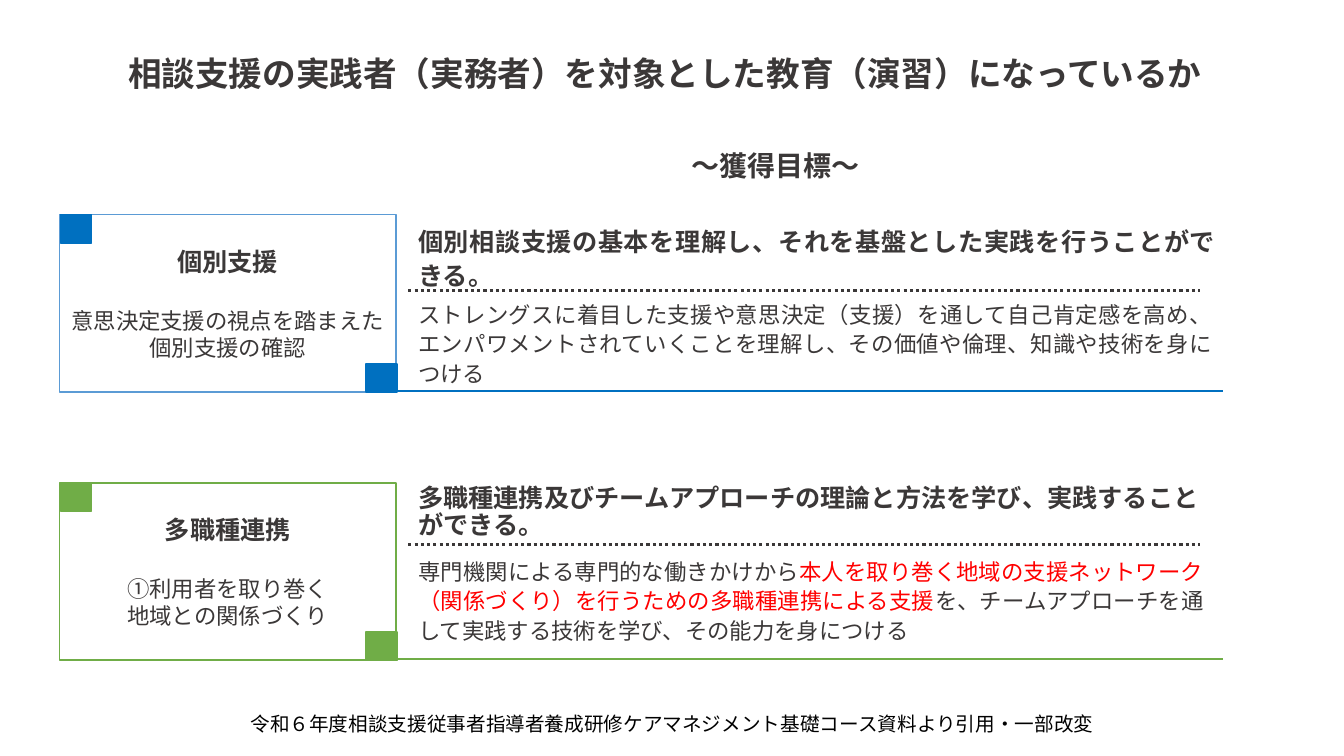
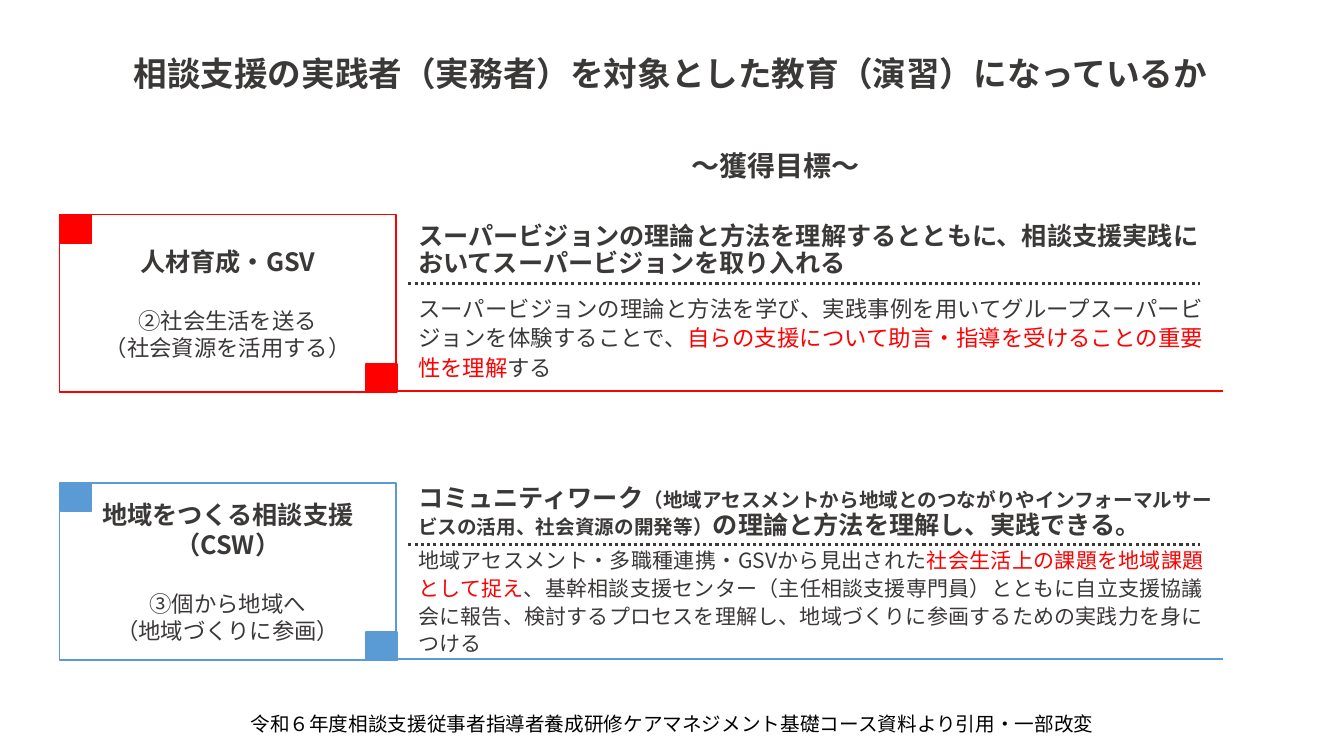
from dataclasses import dataclass
from typing import Optional

from lxml.etree import SubElement
from pptx import Presentation
from pptx.dml.color import RGBColor
from pptx.enum.dml import MSO_LINE
from pptx.enum.shapes import MSO_CONNECTOR, MSO_SHAPE
from pptx.enum.text import MSO_ANCHOR, PP_ALIGN
from pptx.oxml.ns import qn
from pptx.util import Pt

FONT = "Noto Sans CJK JP"
COLORS = {
    "text": "3B3838",
    "black": "000000",
    "red": "FF0000",
    "blue": "0070C0",
    "light blue": "5B9BD5",
    "green": "70AD47",
}
LINE_HEIGHT = 1.2
TITLE = "相談支援の実践者（実務者）を対象とした教育（演習）になっているか"
SUBTITLE = "～獲得目標～"
SOURCE_NOTE = "令和６年度相談支援従事者指導者養成研修ケアマネジメント基礎コース資料より引用・一部改変"

PANEL_LEFT, PANEL_WIDTH, PANEL_HEIGHT = 42.5, 240.5, 126.7
PANEL_TOPS = (153.4, 344.9)
HEADING_TOPS = (156.2, 343.4)
CORNER_WIDTH, CORNER_HEIGHT = 22.3, 20.2
GOAL_LEFT, HEADING_WIDTH = 291.6, 584
DOTTED_RIGHT, BASELINE_RIGHT = 857.5, 873.4


@dataclass(frozen=True)
class Run:
    text: str
    size: float = 16
    color: str = "text"
    bold: bool = False


@dataclass(frozen=True)
class Line:
    """One paragraph with its alignment and spacing."""
    runs: tuple[Run, ...]
    align: PP_ALIGN = PP_ALIGN.CENTER
    spacing: float = 1.0
    before: float = 0


@dataclass(frozen=True)
class Box:
    left: float
    top: float
    width: float
    height: float


@dataclass(frozen=True)
class Goal:
    accent: str
    names: tuple[str, ...]
    topics: tuple[str, ...]
    heading: Line
    body: Line
    dotted_top: float
    body_top: float
    body_width: float = 575.3
    outline: Optional[str] = None


@dataclass(frozen=True)
class GoalSlide:
    title_width: float
    goals: tuple[Goal, Goal]


def heading(*runs: Run, align: PP_ALIGN = PP_ALIGN.LEFT, spacing: float = 0.9) -> Line:
    return Line(runs, align, spacing)


def body(*runs: Run) -> Line:
    return Line(runs, PP_ALIGN.JUSTIFY, 1.1)


def strong(text: str, size: float = 18) -> Run:
    return Run(text, size, bold=True)


SLIDES = (
    GoalSlide(906.5, (
        Goal(
            "blue", ("個別支援",), ("意思決定支援の視点を踏まえた個別支援の確認",),
            heading(strong("個別相談支援の基本を理解し、それを基盤とした実践を行うことができる。"),
                    align=PP_ALIGN.JUSTIFY, spacing=1.1),
            body(Run("ストレングスに着目した支援や意思決定（支援）を通して自己肯定感を高め、"
                     "エンパワメントされていくことを理解し、その価値や倫理、知識や技術を身につける")),
            dotted_top=207.4, body_top=209.5, body_width=581.8, outline="light blue",
        ),
        Goal(
            "green", ("多職種連携",), ("①利用者を取り巻く", "地域との関係づくり"),
            heading(strong("多職種連携及びチームアプローチの理論と方法を学び、実践することができる。")),
            body(Run("専門機関による専門的な働きかけから"),
                 Run("本人を取り巻く地域の支援ネットワーク（関係づくり）を行うための多職種連携による支援",
                     color="red"),
                 Run("を、チームアプローチを通して実践する技術を学び、その能力を身につける")),
            dotted_top=388.8, body_top=393.1,
        ),
    )),
    GoalSlide(914.4, (
        Goal(
            "red", ("人材育成・GSV",), ("②社会生活を送る", "（社会資源を活用する）"),
            heading(strong("スーパービジョンの理論と方法を理解するとともに、"
                           "相談支援実践においてスーパービジョンを取り入れる")),
            body(Run("スーパービジョンの理論と方法を学び、"
                     "実践事例を用いてグループスーパービジョンを体験することで、"),
                 Run("自らの支援について助言・指導を受けることの重要性を理解", color="red"),
                 Run("する")),
            dotted_top=202.3, body_top=205.2,
        ),
        Goal(
            "light blue", ("地域をつくる相談支援", "（CSW）"),
            ("③個から地域へ", "（地域づくりに参画）"),
            heading(strong("コミュニティワーク"),
                    strong("（地域アセスメントから地域とのつながりや"
                           "インフォーマルサービスの活用、社会資源の開発等）", 14),
                    strong("の理論と方法を理解し、実践できる。")),
            body(Run("地域アセスメント・多職種連携・GSVから見出された", 15),
                 Run("社会生活上の課題を地域課題として捉え", 15, "red"),
                 Run("、基幹相談支援センター（主任相談支援専門員）とともに自立支援協議会に報告、"
                     "検討するプロセスを理解し、地域づくりに参画するための実践力を身につける", 15)),
            dotted_top=388.8, body_top=385.9,
        ),
    )),
)


def rgb(name: str) -> RGBColor:
    return RGBColor.from_string(COLORS[name])


def apply(target, formats: dict) -> None:
    for name, value in formats.items():
        setattr(target, name, value)


def write(text_frame, lines: list[Line], anchor: MSO_ANCHOR) -> None:
    apply(text_frame, {"word_wrap": True, "vertical_anchor": anchor})
    for index, line in enumerate(lines):
        paragraph = text_frame.add_paragraph() if index else text_frame.paragraphs[0]
        size = max(run.size for run in line.runs)
        apply(paragraph, {
            "alignment": line.align,
            "line_spacing": Pt(round(size * LINE_HEIGHT * line.spacing, 1)),
            "space_before": Pt(line.before),
        })
        for run in line.runs:
            text_run = paragraph.add_run()
            text_run.text = run.text
            apply(text_run.font, {"name": FONT, "size": Pt(run.size), "bold": run.bold})
            text_run.font.color.rgb = rgb(run.color)
            # East Asian glyphs take their typeface from a:ea
            east_asian = SubElement(text_run.font._element, qn("a:ea"))
            east_asian.set("typeface", FONT)


def add_text(slide, box: Box, line: Line, anchor: MSO_ANCHOR = MSO_ANCHOR.TOP) -> None:
    text_box = slide.shapes.add_textbox(
        Pt(box.left), Pt(box.top), Pt(box.width), Pt(box.height))
    write(text_box.text_frame, [line], anchor)


def add_block(slide, box: Box, kind: MSO_SHAPE = MSO_SHAPE.RECTANGLE,
              fill: Optional[str] = None, outline: Optional[str] = None):
    shape = slide.shapes.add_shape(
        kind, Pt(box.left), Pt(box.top), Pt(box.width), Pt(box.height))
    shape.shadow.inherit = False
    if fill:
        shape.fill.solid()
        shape.fill.fore_color.rgb = rgb(fill)
    else:
        shape.fill.background()
    if outline:
        shape.line.color.rgb = rgb(outline)
        shape.line.width = Pt(1)
    else:
        shape.line.fill.background()
    return shape


def add_rule(slide, left: float, right: float, top: float, color: str, width: float,
             dash: Optional[MSO_LINE] = None) -> None:
    connector = slide.shapes.add_connector(
        MSO_CONNECTOR.STRAIGHT, Pt(left), Pt(top), Pt(right), Pt(top))
    connector.line.color.rgb = rgb(color)
    apply(connector.line, {"width": Pt(width), "dash_style": dash})
    SubElement(connector._element.spPr, qn("a:effectLst"))


def add_banner(slide, box: Box, text: str, size: float) -> None:
    shape = add_block(slide, box, MSO_SHAPE.ROUNDED_RECTANGLE)
    write(shape.text_frame, [Line((strong(text, size),))], MSO_ANCHOR.MIDDLE)


def add_panel(slide, goal: Goal, top: float) -> None:
    """Draw the outlined theme box, its two corner marks and the line beside it."""
    panel = add_block(slide, Box(PANEL_LEFT, top, PANEL_WIDTH, PANEL_HEIGHT),
                      outline=goal.outline or goal.accent)
    lines = [Line((strong(name),)) for name in goal.names]
    lines += [Line((Run(topic),), before=0 if index else 18 * LINE_HEIGHT)
              for index, topic in enumerate(goal.topics)]
    write(panel.text_frame, lines, MSO_ANCHOR.MIDDLE)
    right, bottom = PANEL_LEFT + PANEL_WIDTH, top + PANEL_HEIGHT
    for corner_left, corner_top in (
        (right - CORNER_WIDTH + 0.6, bottom - CORNER_HEIGHT),
        (PANEL_LEFT + 0.5, top),
    ):
        add_block(slide, Box(corner_left, corner_top, CORNER_WIDTH, CORNER_HEIGHT),
                  fill=goal.accent, outline=goal.accent)
    add_rule(slide, right, BASELINE_RIGHT, bottom - 0.7, goal.accent, 1.5)


def add_goal(slide, goal: Goal, panel_top: float, heading_top: float) -> None:
    add_panel(slide, goal, panel_top)
    add_text(slide, Box(GOAL_LEFT, heading_top, HEADING_WIDTH, 49), goal.heading)
    add_rule(slide, GOAL_LEFT, DOTTED_RIGHT, goal.dotted_top, "text", 2.25,
             MSO_LINE.ROUND_DOT)
    add_text(slide, Box(GOAL_LEFT, goal.body_top, goal.body_width, 80), goal.body)


def add_goal_slide(presentation, content: GoalSlide) -> None:
    slide = presentation.slides.add_slide(presentation.slide_layouts[6])
    add_banner(slide, Box(21.6, 27.4, content.title_width, 49), TITLE, 24)
    add_banner(slide, Box(422.6, 93.6, 262.8, 49), SUBTITLE, 20)
    for goal, panel_top, heading_top in zip(content.goals, PANEL_TOPS, HEADING_TOPS):
        add_goal(slide, goal, panel_top, heading_top)
    add_text(slide, Box(144, 503.3, 672.5, 29.5),
             Line((Run(SOURCE_NOTE, 14, "black"),), spacing=0.9), MSO_ANCHOR.MIDDLE)


def main() -> None:
    presentation = Presentation()
    apply(presentation, {"slide_width": Pt(960), "slide_height": Pt(540)})
    for content in SLIDES:
        add_goal_slide(presentation, content)
    presentation.save("out.pptx")


if __name__ == "__main__":
    main()
